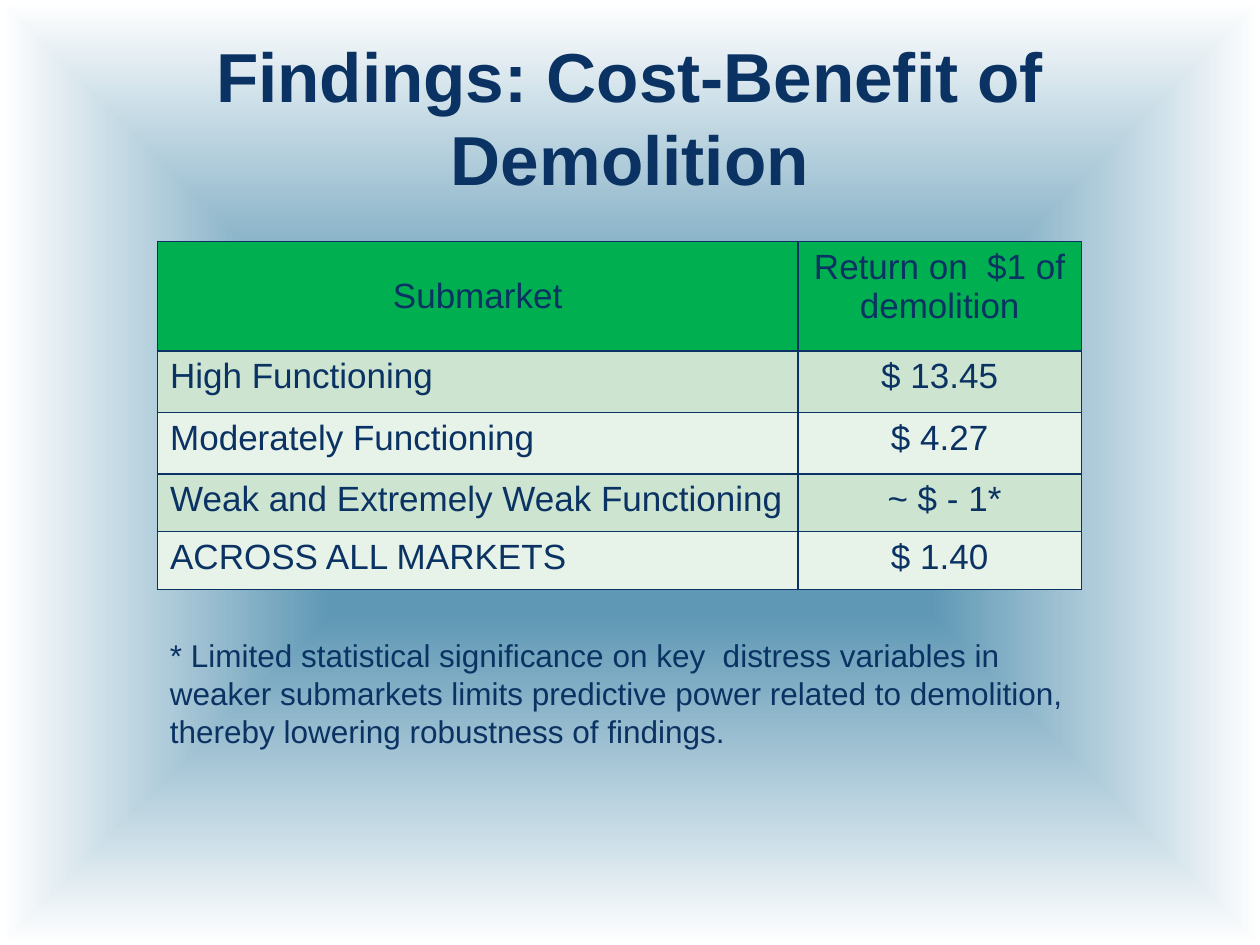
from dataclasses import dataclass

from lxml.etree import SubElement
from pptx import Presentation
from pptx.dml.color import RGBColor
from pptx.enum.text import MSO_ANCHOR, PP_ALIGN
from pptx.oxml import parse_xml
from pptx.oxml.ns import nsdecls, qn
from pptx.util import Pt


@dataclass(frozen=True)
class Theme:
    font: str = "Arial"
    ink: str = "0A3262"
    header: str = "00B050"
    bands: tuple = ("CCE4D0", "E7F2E9")
    glow: str = "5F98B5"
    edge: str = "FFFFFF"
    title_size: float = 39.6
    table_size: float = 20
    note_size: float = 18


THEME = Theme()

RETURNS = [
    ("Submarket", "Return on  $1 of demolition"),
    ("High Functioning", "$ 13.45"),
    ("Moderately Functioning", "$ 4.27"),
    ("Weak and Extremely Weak Functioning", " ~ $ - 1*"),
    ("ACROSS ALL MARKETS", "$ 1.40"),
]
COLUMN_WIDTHS = (366, 162)
ROW_HEIGHTS = (62.5, 35.2, 35.2, 33, 33)


def write(frame, text, size, bold=False, align=PP_ALIGN.LEFT):
    paragraph = frame.paragraphs[0]
    paragraph.alignment = align
    run = paragraph.add_run()
    run.text = text
    run.font.name = THEME.font
    run.font.size = Pt(size)
    run.font.bold = bold
    run.font.color.rgb = RGBColor.from_string(THEME.ink)


def add_text(slide, box, text, anchor=MSO_ANCHOR.TOP, **text_format):
    frame = slide.shapes.add_textbox(*map(Pt, box)).text_frame
    frame.word_wrap = True
    frame.vertical_anchor = anchor
    write(frame, text, **text_format)


def paint_background(slide):
    slide.background.fill.gradient()
    gradient = slide.element.xpath(".//p:bgPr/a:gradFill")[0]
    gradient.getparent().replace(gradient, parse_xml(
        f'<a:gradFill {nsdecls("a")} rotWithShape="1"><a:gsLst>'
        f'<a:gs pos="30000"><a:srgbClr val="{THEME.glow}"><a:alpha val="60000"/></a:srgbClr></a:gs>'
        f'<a:gs pos="100000"><a:srgbClr val="{THEME.edge}"/></a:gs></a:gsLst>'
        '<a:path path="rect"><a:fillToRect l="50000" t="50000" r="50000" b="50000"/></a:path>'
        '</a:gradFill>'))


def style_cell(cell, fill):
    cell.fill.solid()
    cell.fill.fore_color.rgb = RGBColor.from_string(fill)
    # Borders come before the fill in the cell properties
    properties = cell._tc.get_or_add_tcPr()
    for position, side in enumerate(("lnL", "lnR", "lnT", "lnB")):
        border = SubElement(properties, qn(f"a:{side}"), w=str(Pt(1)))
        solid = SubElement(border, qn("a:solidFill"))
        SubElement(solid, qn("a:srgbClr"), val=THEME.ink)
        properties.insert(position, border)


def add_returns_table(slide, left, top):
    table = slide.shapes.add_table(
        len(RETURNS), len(COLUMN_WIDTHS), Pt(left), Pt(top),
        Pt(sum(COLUMN_WIDTHS)), Pt(sum(ROW_HEIGHTS))).table
    for column, width in zip(table.columns, COLUMN_WIDTHS):
        column.width = Pt(width)
    for r, (height, values) in enumerate(zip(ROW_HEIGHTS, RETURNS)):
        table.rows[r].height = Pt(height)
        fill = THEME.bands[(r - 1) % 2] if r else THEME.header
        for c, value in enumerate(values):
            cell = table.cell(r, c)
            style_cell(cell, fill)
            centred = r == 0 or c == 1
            write(cell.text_frame, value, THEME.table_size,
                  align=PP_ALIGN.CENTER if centred else PP_ALIGN.LEFT)
    table.cell(0, 0).vertical_anchor = MSO_ANCHOR.MIDDLE


def main():
    deck = Presentation()
    deck.slide_width, deck.slide_height = Pt(720), Pt(540)
    slide = deck.slides.add_slide(deck.slide_layouts[6])
    paint_background(slide)

    # Title
    add_text(slide, (36, 21.6, 648, 90), "Findings: Cost-Benefit of Demolition",
             anchor=MSO_ANCHOR.MIDDLE, size=THEME.title_size, bold=True,
             align=PP_ALIGN.CENTER)

    # Returns by submarket
    add_returns_table(slide, 90, 138)

    # Footnote
    add_text(slide, (90, 360, 540, 72.7),
             "* Limited statistical significance on key  distress variables in "
             "weaker submarkets limits predictive power related to demolition, "
             "thereby lowering robustness of findings.", size=THEME.note_size)

    deck.save("out.pptx")


if __name__ == "__main__":
    main()
